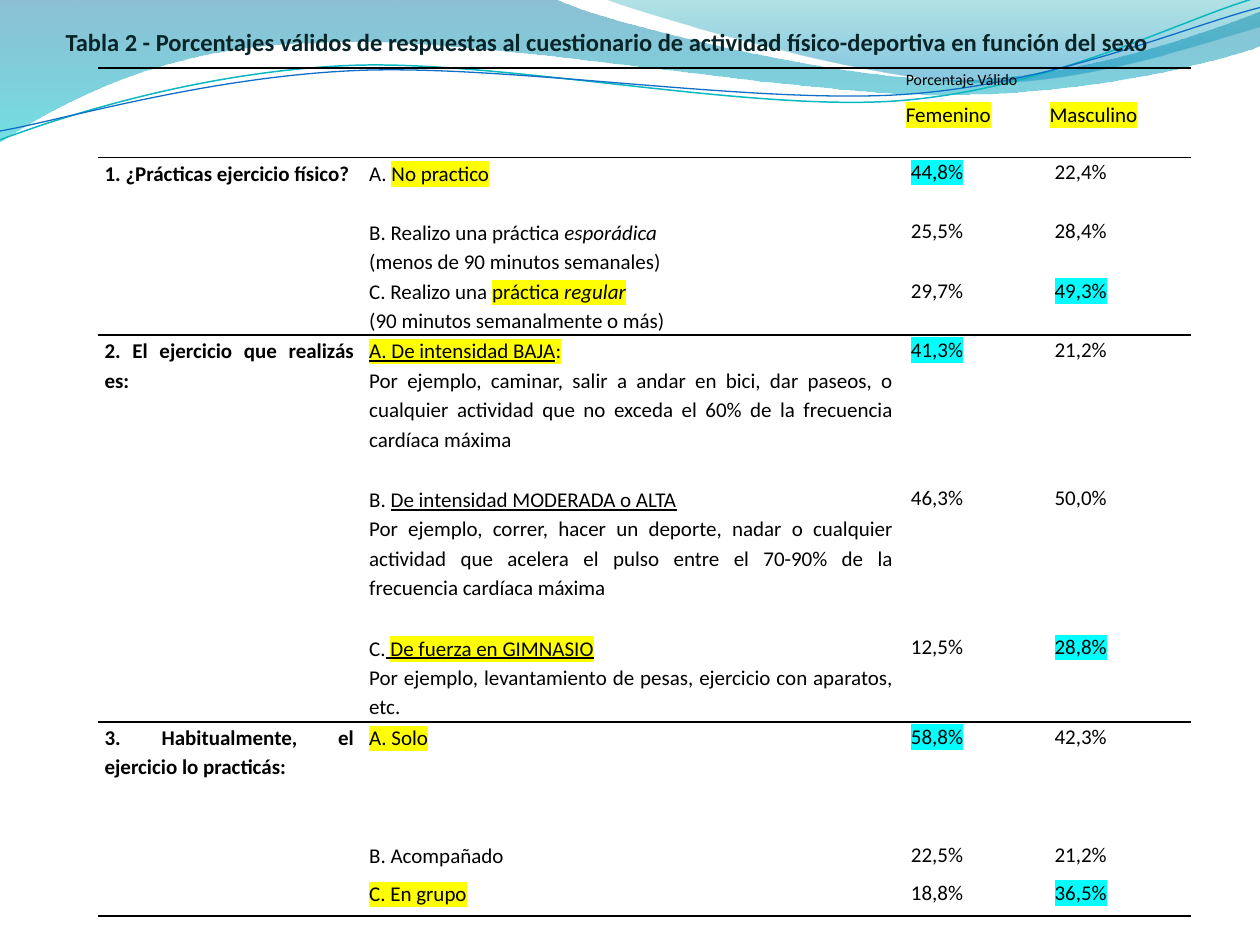
import math

from lxml import etree
from pptx import Presentation
from pptx.dml.color import RGBColor
from pptx.enum.text import MSO_ANCHOR, MSO_AUTO_SIZE, PP_ALIGN
from pptx.oxml.ns import qn
from pptx.util import Inches, Pt

CENTER, JUSTIFY = PP_ALIGN.CENTER, PP_ALIGN.JUSTIFY
MIDDLE = MSO_ANCHOR.MIDDLE
FIT_SHAPE = MSO_AUTO_SIZE.SHAPE_TO_FIT_TEXT

FONT = "Calibri"
NO_GRID_STYLE = "{2D5ABB26-0587-4C30-8999-92F81FD0307C}"
COLORS = {
    "text": "000000", "title": "072428", "yellow": "FFFF00", "cyan": "00FFFF",
    "deep": "0074A1", "aqua": "00C6CF", "teal": "00A1A9", "sea": "008BBF",
    "teal_line": "0AB8BF", "blue_line": "0F6FC6",
}

# Wave outlines: a start point, then lines (one point) and curves (three points)
LEFT_WAVE = [[(0, -0.01)], [(4.4, -0.01)],
             [(4.76, 0.17), (6.64, 0.63), (7.58, 0.63)],
             [(8.53, 0.63), (9.58, 0.26), (10, 0.09)], [(10.01, 0.36)],
             [(9.83, 0.44), (8.7, 0.76), (7.46, 0.75)],
             [(6.22, 0.75), (3.82, 0.28), (2.57, 0.34)],
             [(1.29, 0.35), (0.46, 0.83), (-0.01, 1.13)]]
RIGHT_WAVE = [[(4.79, -0.01)], [(5.09, 0.11), (6.82, 0.62), (7.69, 0.65)],
              [(8.56, 0.69), (9.61, 0.32), (10, 0.21)], [(10, 0)]]
TEAL_CURVE = [[(0, 1.11)], [(0.48, 0.93), (1.58, 0.57), (2.77, 0.52)],
              [(3.95, 0.47), (5.93, 0.89), (7.13, 0.8)],
              [(8.33, 0.71), (9.38, 0.15), (9.98, -0.02)]]
BLUE_CURVE = [[(0, 1.04)], [(0.47, 0.96), (1.64, 0.61), (2.83, 0.56)],
              [(4.03, 0.51), (5.97, 0.83), (7.17, 0.75)],
              [(8.36, 0.67), (9.41, 0.21), (10, 0.06)]]

# Table content. Run styles: b bold, i italic, u underline, y yellow, c cyan
COLUMN_WIDTHS = [2.1, 4.26, 1.14, 1.17]
ROW_HEIGHTS = [0.24, 0.47, 0.47, 0.47, 0.47, 1.18, 1.18, 0.71, 0.94, 0.3, 0.3]
SECTION_STARTS = [0, 2, 5, 8]
SECTION_ENDS = [1, 4, 7, 10]
# Each answer: question, answer paragraphs, (female, style), (male, style)
ANSWERS = [
    ("1. ¿Prácticas ejercicio físico?",
     [[("A. ", ""), ("No practico", "y")]], ("44,8%", "c"), ("22,4%", "")),
    ("", [[("B. Realizo una práctica ", ""), ("esporádica", "i")],
          [("(menos de 90 minutos semanales)", "")]], ("25,5%", ""), ("28,4%", "")),
    ("", [[("C. Realizo una ", ""), ("práctica ", "y"), ("regular", "iy")],
          [("(90 minutos semanalmente o más)", "")]], ("29,7%", ""), ("49,3%", "c")),
    ("2. El ejercicio que realizás es: ",
     [[("A. De intensidad BAJA", "uy"), (":", "y")],
      [("Por ejemplo, caminar, salir a andar en bici, dar paseos, o cualquier actividad "
        "que no exceda el 60% de la frecuencia cardíaca máxima", "")]],
     ("41,3%", "c"), ("21,2%", "")),
    ("", [[("B. ", ""), ("De intensidad MODERADA o ALTA", "u")],
          [("Por ejemplo, correr, hacer un deporte, nadar o cualquier actividad que acelera "
            "el pulso entre el 70-90% de la frecuencia cardíaca máxima", "")]],
     ("46,3%", ""), ("50,0%", "")),
    ("", [[("C.", ""), (" ", "u"), ("De fuerza en GIMNASIO", "uy")],
          [("Por ejemplo, levantamiento de pesas, ejercicio con aparatos, etc.", "")]],
     ("12,5%", ""), ("28,8%", "c")),
    ("3. Habitualmente, el ejercicio lo practicás:",
     [[("A. Solo", "y")]], ("58,8%", "c"), ("42,3%", "")),
    ("", [[("B. Acompañado", "")]], ("22,5%", ""), ("21,2%", "")),
    ("", [[("C. En grupo", "y")]], ("18,8%", ""), ("36,5%", "c")),
]


def color(name):
    return RGBColor.from_string(COLORS[name])


def turn(outline, center, degrees):
    cosine, sine = math.cos(math.radians(degrees)), math.sin(math.radians(degrees))

    def turn_point(point):
        x, y = point[0] - center[0], point[1] - center[1]
        return center[0] + x * cosine - y * sine, center[1] + x * sine + y * cosine

    return [[turn_point(point) for point in step] for step in outline]


def add_outline(slide, left, top, outline, close):
    steps = [[(Inches(left + x), Inches(top + y)) for x, y in step] for step in outline]
    corners = [step[-1] for step in steps]
    builder = slide.shapes.build_freeform(*corners[0], scale=1.0)
    builder.add_line_segments(corners[1:], close=close)
    shape = builder.convert_to_shape()
    shape.shadow.inherit = False
    # Bend the segments that have control points
    segments = list(shape._element.iter(qn("a:lnTo")))
    for segment, step in zip(segments, steps[1:]):
        if len(step) == 3:
            curve = etree.Element(qn("a:cubicBezTo"))
            for x, y in step:
                etree.SubElement(curve, qn("a:pt"), x=str(x - shape.left), y=str(y - shape.top))
            segment.getparent().replace(segment, curve)
    return shape


def add_waves(slide, left, top):
    # Translucent gradient bands: colour, position, opacity in percent
    for outline, stops in (
        (LEFT_WAVE, [("deep", 0, 45), ("aqua", 1, 55)]),
        (RIGHT_WAVE, [("teal", 0, 30), ("sea", 0.8, 45)]),
    ):
        shape = add_outline(slide, left, top, outline, True)
        shape.line.fill.background()
        shape.fill.gradient()
        shape.fill.gradient_angle = 270
        for stop, (name, position, _) in zip(shape.fill.gradient_stops, stops):
            stop.color.rgb = color(name)
            stop.position = position
        gradient = shape._element.spPr.find(qn("a:gradFill"))
        for element, (_, _, opacity) in zip(gradient.iter(qn("a:srgbClr")), stops):
            etree.SubElement(element, qn("a:alpha"), val=str(opacity * 1000))
    # Thin curves, slightly tilted
    tilt = -2.7
    for outline, center, name, width in (
        (TEAL_CURVE, (4.99, 0.57), "teal_line", 0.85),
        (BLUE_CURVE, (5, 0.59), "blue_line", 0.75),
    ):
        shape = add_outline(slide, left, top, turn(outline, center, -tilt), False)
        shape.rotation = tilt
        shape.fill.background()
        shape.line.color.rgb = color(name)
        shape.line.width = Pt(width)


def format_run(run, size, style="", name="text"):
    font = run.font
    font.size = Pt(size)
    font.bold = "b" in style
    font.italic = "i" in style
    font.underline = "u" in style
    font.color.rgb = color(name)
    for letter, marker in (("y", "yellow"), ("c", "cyan")):
        if letter in style:
            highlight = etree.SubElement(run._r.get_or_add_rPr(), qn("a:highlight"))
            etree.SubElement(highlight, qn("a:srgbClr"), val=COLORS[marker])
    font.name = FONT


def add_title(slide, left, top, width, height):
    box = slide.shapes.add_textbox(Inches(left), Inches(top), Inches(width), Inches(height))
    frame = box.text_frame
    frame.text = ("Tabla 2 - Porcentajes válidos de respuestas al cuestionario de "
                  "actividad físico-deportiva en función del sexo")
    frame.word_wrap = False
    frame.auto_size = FIT_SHAPE
    frame.vertical_anchor = MIDDLE
    paragraph = frame.paragraphs[0]
    paragraph.alignment = CENTER
    format_run(paragraph.runs[0], 14, "b", "title")


def write_cell(cell, paragraphs, size=12, value=False):
    frame = cell.text_frame
    for index, runs in enumerate(paragraphs):
        paragraph = frame.add_paragraph() if index else frame.paragraphs[0]
        paragraph.alignment = JUSTIFY
        paragraph.line_spacing = Pt(16) if value else 1.15
        if value:
            paragraph._p.get_or_add_pPr().set("marL", str(Inches(0.04)))
        for text, style in runs:
            run = paragraph.add_run()
            run.text = text
            format_run(run, size, style)


def prepare_cell(cell, row):
    cell.margin_left = cell.margin_right = Inches(0.05)
    cell.margin_top = cell.margin_bottom = 0
    # Small text size keeps empty cells from stretching their rows
    etree.SubElement(cell.text_frame.paragraphs[0]._p, qn("a:endParaRPr"), sz="900")
    properties = cell._tc.get_or_add_tcPr()
    for tag, rows in (("a:lnT", SECTION_STARTS + [end + 1 for end in SECTION_ENDS]),
                      ("a:lnB", SECTION_ENDS)):
        line = etree.SubElement(properties, qn(tag), w=str(Pt(1)))
        if row in rows:
            fill = etree.SubElement(line, qn("a:solidFill"))
            etree.SubElement(fill, qn("a:srgbClr"), val=COLORS["text"])
        else:
            etree.SubElement(line, qn("a:noFill"))
    cell.fill.background()


def add_results_table(slide, left, top):
    frame = slide.shapes.add_table(len(ROW_HEIGHTS), len(COLUMN_WIDTHS), Inches(left), Inches(top),
                                   Inches(sum(COLUMN_WIDTHS)), Inches(sum(ROW_HEIGHTS)))
    table = frame.table
    table.first_row = table.horz_banding = False
    table._tbl.tblPr.find(qn("a:tableStyleId")).text = NO_GRID_STYLE
    for column, width in zip(table.columns, COLUMN_WIDTHS):
        column.width = Inches(width)
    for index, height in enumerate(ROW_HEIGHTS):
        table.rows[index].height = Inches(height)
        for cell in table.rows[index].cells:
            prepare_cell(cell, index)
    # Header
    table.cell(0, 2).merge(table.cell(0, 3))
    write_cell(table.cell(0, 2), [[("Porcentaje Válido", "")]], size=9)
    for column, label in enumerate(("Femenino", "Masculino"), 2):
        write_cell(table.cell(1, column), [[(label, "y")]])
    # Questions, answers and percentages
    for row, (question, answer, *values) in enumerate(ANSWERS, 2):
        if question:
            table.cell(row, 0).margin_right = Inches(0.07)
            write_cell(table.cell(row, 0), [[(question, "b")]])
        write_cell(table.cell(row, 1), answer)
        for column, value in enumerate(values, 2):
            write_cell(table.cell(row, column), [[value]], value=True)


def main():
    presentation = Presentation()
    presentation.slide_width, presentation.slide_height = Inches(10), Inches(7.5)
    slide = presentation.slides.add_slide(presentation.slide_layouts[6])
    add_waves(slide, 0, 0)
    add_title(slide, 0.39, 0.16, 8.86, 0.34)
    add_results_table(slide, 0.78, 0.54)
    presentation.save("out.pptx")


if __name__ == "__main__":
    main()
